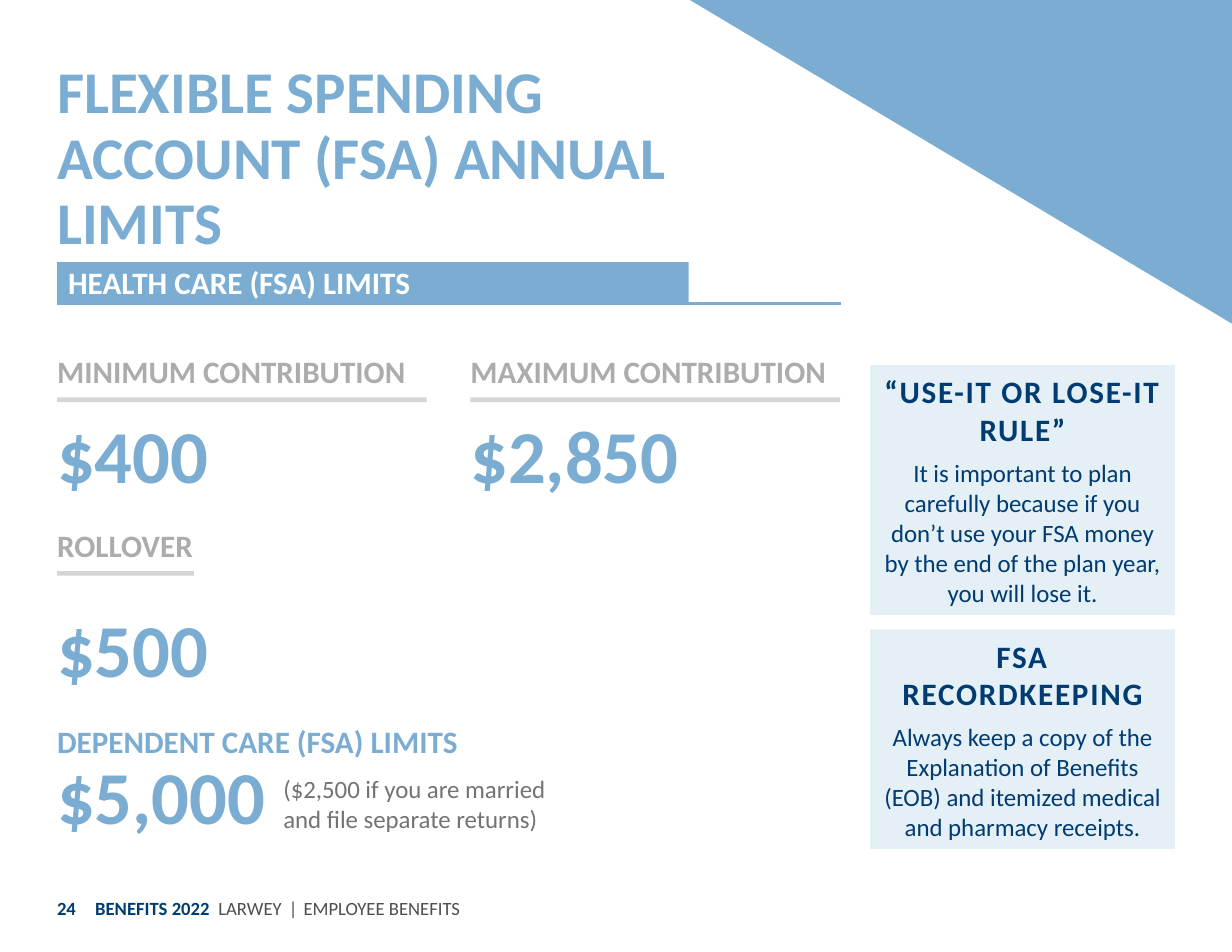
from dataclasses import dataclass
from typing import Optional

from lxml import etree
from pptx import Presentation
from pptx.dml.color import RGBColor
from pptx.enum.shapes import MSO_CONNECTOR, MSO_SHAPE
from pptx.enum.text import MSO_ANCHOR, PP_ALIGN
from pptx.oxml.ns import qn
from pptx.util import Inches, Pt

LEFT, CENTER = PP_ALIGN.LEFT, PP_ALIGN.CENTER
TOP, MIDDLE = MSO_ANCHOR.TOP, MSO_ANCHOR.MIDDLE
RECT, TRIANGLE = MSO_SHAPE.RECTANGLE, MSO_SHAPE.RIGHT_TRIANGLE
STRAIGHT = MSO_CONNECTOR.STRAIGHT


@dataclass(frozen=True)
class Theme:
    font: str = "Calibri"
    blue: str = "7BADD3"
    card: str = "7BAFD4"
    navy: str = "003C71"
    gray: str = "ACACAC"
    note: str = "737373"
    footer: str = "4D4D4E"
    white: str = "FFFFFF"
    title_size: int = 38
    value_size: int = 48
    head_size: int = 20
    body_size: int = 16
    foot_size: int = 12


T = Theme()

# Page grid, in inches
PAGE_W, PAGE_H = 11, 8.5
MARGIN, COL_W, GUTTER = 0.51, 3.3, 0.39
COLS = [MARGIN + i * (COL_W + GUTTER) for i in range(2)]
MAIN_W = 7
SIDE_W = 2.72
SIDE_X = PAGE_W - MARGIN - SIDE_W
HEAD_H, VALUE_H, FOOT_Y, FOOT_H = 0.34, 0.45, 7.88, 0.45


@dataclass(frozen=True)
class Style:
    size: float
    color: str
    bold: bool = False
    tracking: float = 0


@dataclass(frozen=True)
class Limit:
    label: str
    value: str
    col: int
    top: float
    rule_w: float
    value_drop: float
    leading: Optional[float] = 35


@dataclass(frozen=True)
class Card:
    title: str
    body: str
    top: float
    height: float


HEADING = Style(T.head_size, T.gray, True)
VALUE = Style(T.value_size, T.blue, True)
CARD_HEAD = Style(T.head_size, T.navy, True, 1.1)
CARD_BODY = Style(T.body_size, T.navy)
FOOT_BOLD = Style(T.foot_size, T.navy, True)
FOOT = Style(T.foot_size, T.footer)

LIMITS = [
    Limit("MINIMUM CONTRIBUTION", "$400", 0, 3.15, COL_W, 0.81),
    Limit("MAXIMUM CONTRIBUTION", "$2,850", 1, 3.15, COL_W, 0.81),
    Limit("ROLLOVER", "$500", 0, 4.7, 1.22, 0.68, None),
]
CARDS = [
    Card("“USE-IT OR LOSE-IT RULE”",
         "It is important to plan carefully because if you don’t use your FSA "
         "money by the end of the plan year, you will lose it.", 3.26, 2.23),
    Card("FSA RECORDKEEPING",
         "Always keep a copy of the Explanation of Benefits (EOB) and itemized "
         "medical and pharmacy receipts.", 5.62, 1.96),
]


def set_alpha(fill_parent, percent: int) -> None:
    clr = fill_parent.find(".//" + qn("a:srgbClr"))
    etree.SubElement(clr, qn("a:alpha")).set("val", str(percent * 1000))


def style_run(r, style: Style) -> None:
    r.font.name = T.font
    r.font.size = Pt(style.size)
    r.font.bold = style.bold
    r.font.color.rgb = RGBColor.from_string(style.color)
    if style.tracking:
        r._r.get_or_add_rPr().set("spc", str(round(style.tracking * 100)))


def set_frame(tf, inset_x: float = 0, inset_y: float = 0, anchor=TOP) -> None:
    tf.word_wrap = True
    tf.margin_left = tf.margin_right = Inches(inset_x)
    tf.margin_top = tf.margin_bottom = Inches(inset_y)
    tf.vertical_anchor = anchor


def add_text(shapes, x: float, y: float, w: float, h: float, text: str, style: Style,
             leading: Optional[float] = None, inset_x: float = 0, anchor=TOP):
    sp = shapes.add_textbox(Inches(x), Inches(y), Inches(w), Inches(h))
    tf = sp.text_frame
    set_frame(tf, inset_x, 0, anchor)
    tf.text = text
    p = tf.paragraphs[0]
    p.alignment = LEFT
    if leading:
        p.line_spacing = Pt(leading)
    style_run(p.runs[0], style)
    return p


def add_block(shapes, kind, x: float, y: float, w: float, h: float, color: str):
    sp = shapes.add_shape(kind, Inches(x), Inches(y), Inches(w), Inches(h))
    sp.shadow.inherit = False
    sp.fill.solid()
    sp.fill.fore_color.rgb = RGBColor.from_string(color)
    sp.line.fill.background()
    return sp


def add_rule(shapes, x: float, y: float, w: float, color: str, weight: float,
             alpha: int = 100) -> None:
    ln = shapes.add_connector(STRAIGHT, Inches(x), Inches(y), Inches(x + w), Inches(y))
    ln.line.color.rgb = RGBColor.from_string(color)
    ln.line.width = Pt(weight)
    sp_pr = ln._element.spPr
    if alpha < 100:
        set_alpha(sp_pr, alpha)
    etree.SubElement(sp_pr, qn("a:effectLst"))


def add_limit(shapes, item: Limit) -> None:
    x = COLS[item.col]
    add_text(shapes, x, item.top, COL_W + 0.2, HEAD_H, item.label, HEADING)
    add_rule(shapes, x, item.top + 0.42, item.rule_w, T.gray, 3, 50)
    add_text(shapes, x, item.top + item.value_drop, COL_W, VALUE_H, item.value,
             VALUE, item.leading)


def add_card(shapes, card: Card) -> None:
    sp = add_block(shapes, RECT, SIDE_X, card.top, SIDE_W, card.height, T.card)
    set_alpha(sp._element.spPr, 20)
    tf = sp.text_frame
    set_frame(tf, 0.11, 0.06, MIDDLE)
    tf.text = f"{card.title}\n{card.body}"
    for p, style in zip(tf.paragraphs, (CARD_HEAD, CARD_BODY)):
        p.alignment = CENTER
        style_run(p.runs[0], style)
    tf.paragraphs[1].space_before = Pt(6.7)


def add_footer(shapes) -> None:
    add_text(shapes, MARGIN, FOOT_Y, 0.34, FOOT_H, "24", FOOT_BOLD, anchor=MIDDLE)
    p = add_text(shapes, 0.85, FOOT_Y, 4.39, FOOT_H, "BENEFITS 2022", FOOT_BOLD,
                 anchor=MIDDLE)
    tabs = etree.SubElement(p._p.get_or_add_pPr(), qn("a:tabLst"))
    for stop in (1.1, 1.73, 1.86):
        etree.SubElement(tabs, qn("a:tab"), pos=str(Inches(stop)), algn="l")
    r = p.add_run()
    r.text = "\tLARWEY\t|\tEMPLOYEE BENEFITS"
    style_run(r, FOOT)


def main() -> None:
    prs = Presentation()
    prs.slide_width, prs.slide_height = Inches(PAGE_W), Inches(PAGE_H)
    shapes = prs.slides.add_slide(prs.slide_layouts[6]).shapes

    # Title and corner triangle
    add_text(shapes, MARGIN, 0.54, 6.52, 1.77,
             "FLEXIBLE SPENDING ACCOUNT (FSA) ANNUAL LIMITS",
             Style(T.title_size, T.blue, True), 42)
    corner_w = PAGE_W * 0.44
    corner = add_block(shapes, TRIANGLE, PAGE_W - corner_w, 0, corner_w,
                       PAGE_H * 0.34, T.blue)
    xfrm = corner._element.spPr.find(qn("a:xfrm"))
    xfrm.set("flipH", "1")
    xfrm.set("flipV", "1")

    # Health care banner and limits
    add_block(shapes, RECT, MARGIN, 2.34, 5.64, 0.37, T.blue)
    add_text(shapes, MARGIN, 2.3, 5.64, 0.44, "HEALTH CARE (FSA) LIMITS",
             Style(T.head_size, T.white, True), inset_x=0.1, anchor=MIDDLE)
    add_rule(shapes, MARGIN, 2.71, MAIN_W, T.blue, 2.25)
    for item in LIMITS:
        add_limit(shapes, item)

    # Dependent care
    add_text(shapes, MARGIN, 6.45, MAIN_W, HEAD_H, "DEPENDENT CARE (FSA) LIMITS",
             Style(T.head_size, T.blue, True))
    add_text(shapes, MARGIN, 7.01, 2, VALUE_H, "$5,000", VALUE, 35)
    add_text(shapes, 2.53, 6.91, 2.48, 0.55,
             "($2,500 if you are married and file separate returns)",
             Style(T.body_size, T.note))

    # Sidebar and footer
    for card in CARDS:
        add_card(shapes, card)
    add_footer(shapes)

    prs.save("out.pptx")


if __name__ == "__main__":
    main()
